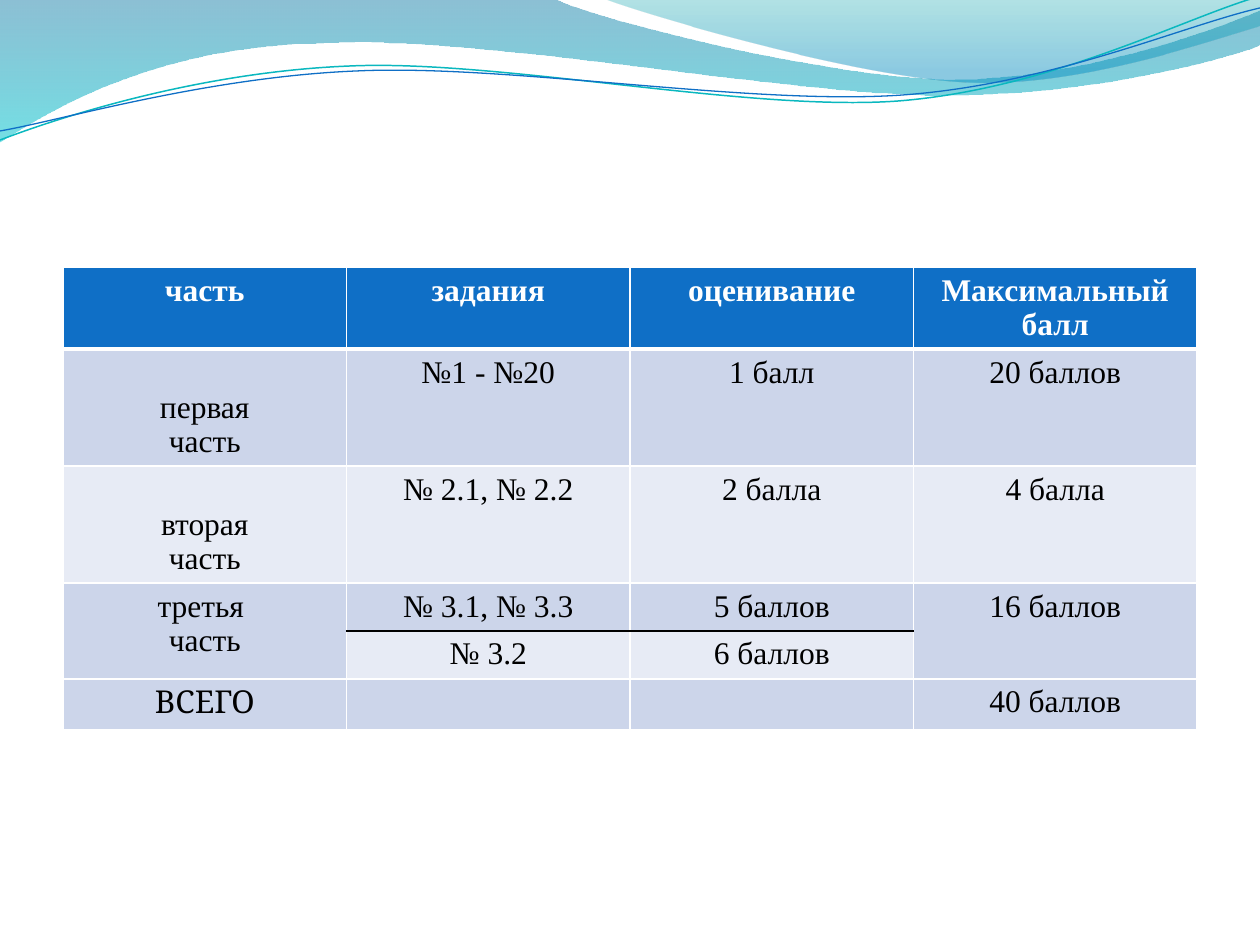
from dataclasses import dataclass

from lxml import etree
from pptx import Presentation
from pptx.dml.color import RGBColor
from pptx.enum.text import PP_ALIGN
from pptx.oxml.ns import qn
from pptx.util import Pt

EMU_PER_PX = 914400 / 126
CENTER = PP_ALIGN.CENTER
BLANK_LAYOUT = 6

WHITE, BLACK, HEADER_BLUE = "FFFFFF", "000000", "0F6FC6"
BANDS = ("CCD5EA", "E7EBF5")
SERIF, TOTAL_FONT = "Times New Roman", "Cambria"
CELL_MARGIN, LINE_HEIGHT = 6, 35


@dataclass
class Stop:
    position: float
    color: str
    opacity: int


@dataclass
class Wave:
    """Each segment has one point (straight) or three points (Bezier)."""
    start: tuple
    segments: list
    stops: tuple = ()
    line_color: str = ""
    line_width: float = 0


@dataclass
class Border:
    color: str = WHITE
    width: float = 1


WAVES = [
    Wave((0, 0), [
        [(554, -1)],
        [(600, 21), (837, 79), (955, 79)],
        [(1075, 79), (1207, 33), (1260, 11)],
        [(1261, 45)],
        [(1239, 55), (1096, 96), (940, 95)],
        [(784, 95), (481, 35), (324, 43)],
        [(163, 45), (58, 105), (-1, 142)],
    ], stops=(Stop(0, "0074A1", 45), Stop(1, "00C6CF", 55))),
    Wave((604, -1), [
        [(641, 14), (859, 78), (969, 82)],
        [(1079, 87), (1211, 40), (1260, 26)],
        [(1260, 0)],
    ], stops=(Stop(0, "00A1A9", 30), Stop(0.8, "008BBF", 45))),
    Wave((0, 140), [
        [(60, 117), (199, 72), (349, 66)],
        [(498, 59), (747, 112), (898, 101)],
        [(1050, 89), (1182, 19), (1257, -3)],
    ], line_color="0AB8BF", line_width=0.85),
    Wave((0, 131), [
        [(59, 121), (207, 77), (357, 71)],
        [(508, 64), (752, 106), (903, 95)],
        [(1053, 84), (1182, 26), (1260, 8)],
    ], line_color=HEADER_BLUE, line_width=0.75),
]

ROWS = [
    ("часть", "задания", "оценивание", "Максимальный\nбалл"),
    ("первая\nчасть", "№1 - №20", "1 балл", "20 баллов"),
    ("вторая\nчасть", "№ 2.1, № 2.2", "2 балла", "4 балла"),
    ("третья \nчасть", "№ 3.1, № 3.3", "5 баллов", "16 баллов"),
    ("", "№ 3.2", "6 баллов", ""),
    ("ВСЕГО", "", "", "40 баллов"),
]
ROW_HEIGHTS = (82, 117, 117, 48, 48, 50)
LOWERED_CELLS = {(1, 0), (2, 0)}
SPLIT_ROW, SPLIT_COLUMNS, MERGED_COLUMNS = 3, (1, 2), (0, 3)


def px(length: float) -> int:
    return round(length * EMU_PER_PX)


def rgb(color: str) -> RGBColor:
    return RGBColor.from_string(color)


def bend_segments(shape, segments: list) -> None:
    """Turn each run of three straight steps into one Bezier curve."""
    steps = iter(shape._element.xpath(".//a:path/a:lnTo"))
    for segment in segments:
        parts = [next(steps) for _ in segment]
        if len(parts) == 3:
            curve = etree.Element(qn("a:cubicBezTo"))
            parts[0].addprevious(curve)
            for part in parts:
                curve.append(part[0])
                part.getparent().remove(part)


def draw_wave(slide, wave: Wave) -> None:
    builder = slide.shapes.build_freeform(*wave.start, scale=EMU_PER_PX)
    points = [point for segment in wave.segments for point in segment]
    builder.add_line_segments(points, close=bool(wave.stops))
    shape = builder.convert_to_shape()
    shape.shadow.inherit = False
    bend_segments(shape, wave.segments)
    if not wave.stops:
        shape.fill.background()
        shape.line.color.rgb = rgb(wave.line_color)
        shape.line.width = Pt(wave.line_width)
        return
    shape.line.fill.background()
    shape.fill.gradient()
    shape.fill.gradient_angle = 270
    for target, stop in zip(shape.fill.gradient_stops, wave.stops):
        target.position = stop.position
        target.color.rgb = rgb(stop.color)
    colors = shape._element.xpath(".//a:gradFill//a:srgbClr")
    for color, stop in zip(colors, wave.stops):
        etree.SubElement(color, qn("a:alpha"), val=str(stop.opacity * 1000))


def edge(row: int, column: int) -> Border:
    """Border below a row; row -1 is the top of the table."""
    if row == 0:
        return Border(width=3)
    if row == SPLIT_ROW and column in SPLIT_COLUMNS:
        return Border(BLACK)
    return Border()


def set_borders(cell, top: Border, bottom: Border) -> None:
    properties = cell._tc.get_or_add_tcPr()
    sides = {"L": Border(), "R": Border(), "T": top, "B": bottom}
    for side, border in sides.items():
        line = etree.SubElement(properties, qn(f"a:ln{side}"),
                                w=str(Pt(border.width)))
        solid = etree.SubElement(line, qn("a:solidFill"))
        etree.SubElement(solid, qn("a:srgbClr"), val=border.color)


def format_cell(cell, row: int, column: int) -> None:
    is_header = row == 0
    set_borders(cell, edge(row - 1, column) if row else Border(), edge(row, column))
    cell.fill.solid()
    cell.fill.fore_color.rgb = rgb(HEADER_BLUE if is_header else BANDS[(row - 1) % 2])
    lowered = (row, column) in LOWERED_CELLS
    cell.margin_top = px(CELL_MARGIN + LINE_HEIGHT * lowered)
    cell.margin_bottom = px(CELL_MARGIN)
    cell.text_frame.text = ROWS[row][column]
    for paragraph in cell.text_frame.paragraphs:
        paragraph.alignment = CENTER
        for run in paragraph.runs:
            run.font.size = Pt(18)
            run.font.name = TOTAL_FONT if run.text == "ВСЕГО" else SERIF
            run.font.bold = is_header
            run.font.color.rgb = rgb(WHITE if is_header else BLACK)


def draw_score_table(slide) -> None:
    table = slide.shapes.add_table(len(ROWS), len(ROWS[0]), px(63), px(267),
                                   px(1134), px(sum(ROW_HEIGHTS))).table
    for row, height in enumerate(ROW_HEIGHTS):
        table.rows[row].height = px(height)
        for column in range(len(ROWS[row])):
            format_cell(table.cell(row, column), row, column)
    for column in MERGED_COLUMNS:
        table.cell(SPLIT_ROW, column).merge(table.cell(SPLIT_ROW + 1, column))


def main() -> None:
    deck = Presentation()
    deck.slide_width, deck.slide_height = px(1260), px(945)
    slide = deck.slides.add_slide(deck.slide_layouts[BLANK_LAYOUT])
    # Wave decoration along the top
    for wave in WAVES:
        draw_wave(slide, wave)
    # Scores for each part of the exam
    draw_score_table(slide)
    deck.save("out.pptx")


if __name__ == "__main__":
    main()
